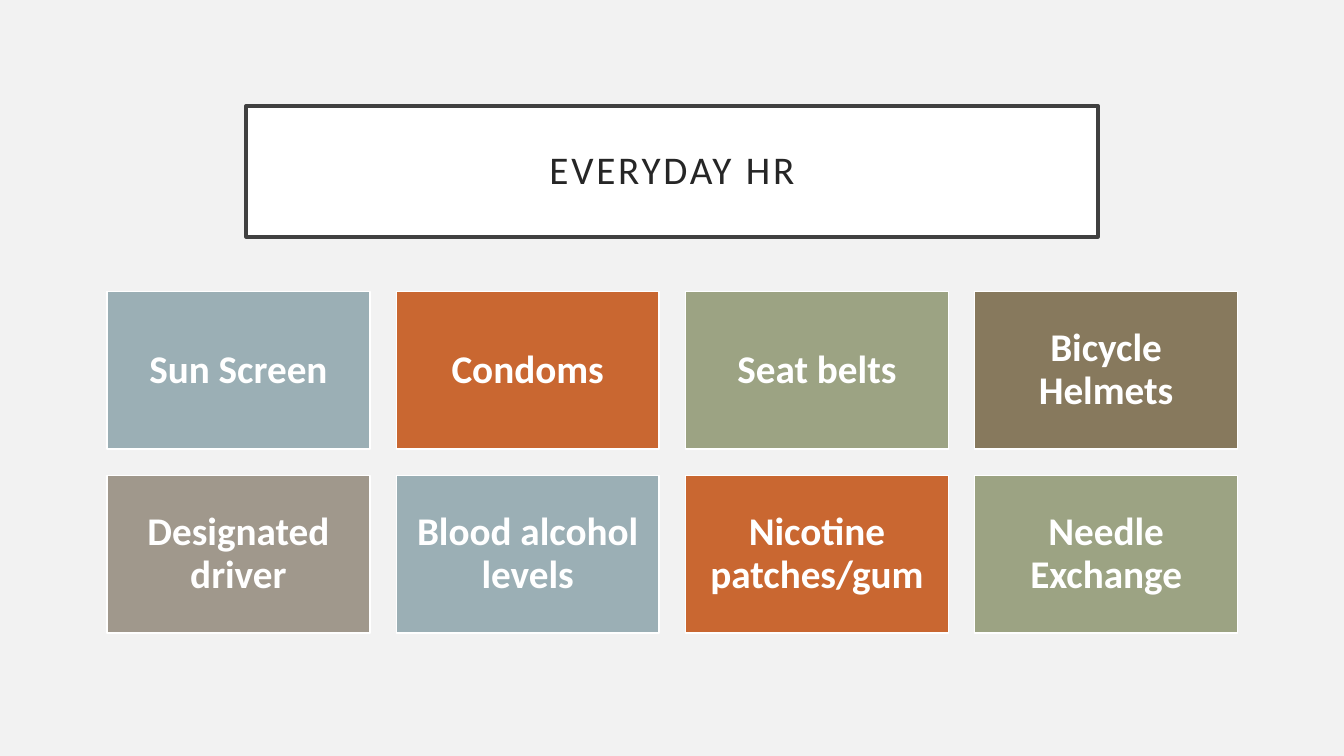
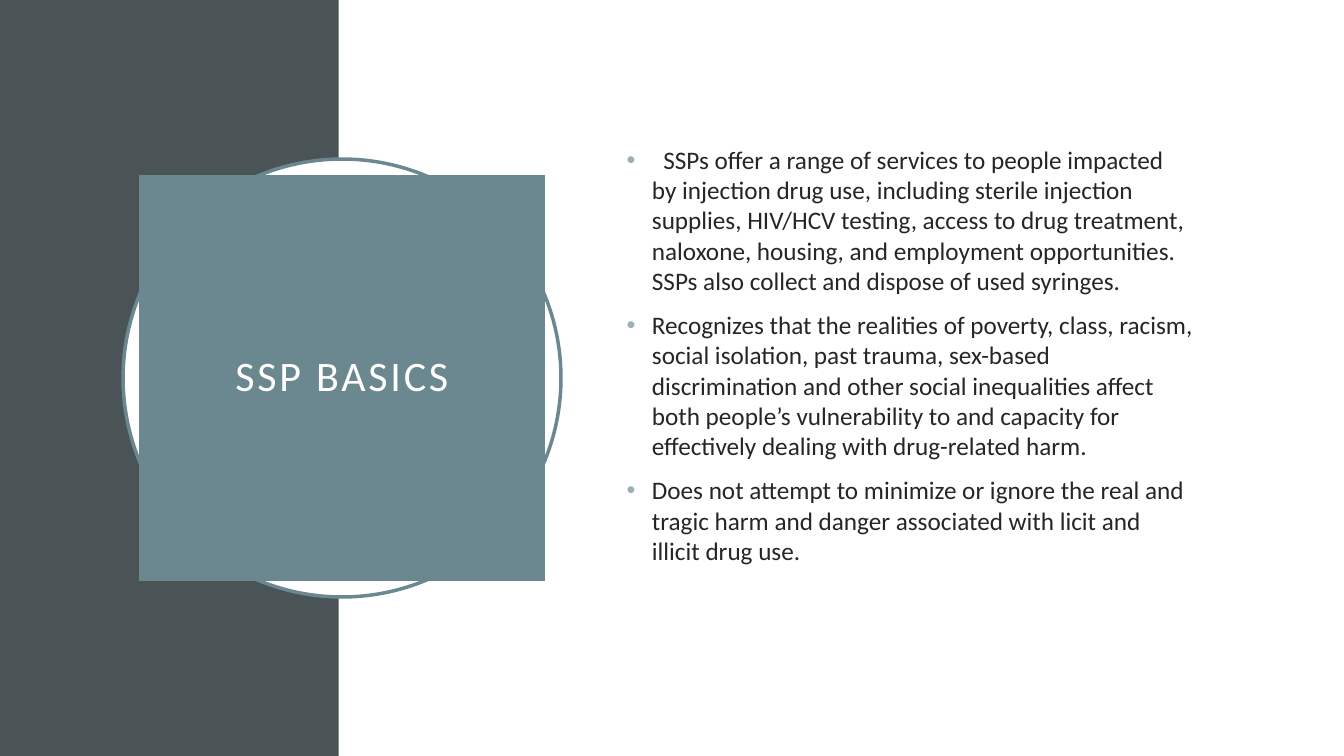
from pptx import Presentation
from pptx.dml.color import RGBColor
from pptx.enum.shapes import MSO_SHAPE as Shape
from pptx.enum.text import MSO_ANCHOR as Anchor, PP_ALIGN as Align
from pptx.oxml.ns import qn
from pptx.util import Pt
from lxml.etree import SubElement

WHITE = RGBColor(0xFF, 0xFF, 0xFF)
PALE = RGBColor(0xF2, 0xF2, 0xF2)
INK = RGBColor(0x26, 0x26, 0x26)
FRAME = RGBColor(0x40, 0x40, 0x40)
SLATE = RGBColor(0x4A, 0x53, 0x56)
TEAL = RGBColor(0x6B, 0x88, 0x91)
MIST = RGBColor(0x9B, 0xAF, 0xB5)
RUST = RGBColor(0xC9, 0x67, 0x31)
SAGE = RGBColor(0x9C, 0xA3, 0x83)
OLIVE = RGBColor(0x87, 0x79, 0x5D)
STONE = RGBColor(0xA0, 0x98, 0x8C)

WIDTH, HEIGHT = 960, 540
BAND_WIDTH = 242

EXAMPLES = [
    ("Sun Screen", MIST), ("Condoms", RUST),
    ("Seat belts", SAGE), ("Bicycle Helmets", OLIVE),
    ("Designated driver", STONE), ("Blood alcohol levels", MIST),
    ("Nicotine patches/gum", RUST), ("Needle Exchange", SAGE),
]
BASICS = [
    "\N{NO-BREAK SPACE}\N{NO-BREAK SPACE}SSPs offer a range of services to people impacted by injection drug use, "
    "including sterile injection supplies, HIV/HCV testing, access to drug treatment, "
    "naloxone, housing, and employment opportunities. SSPs also collect and dispose of "
    "used syringes.",
    "Recognizes that the realities of poverty, class, racism, social isolation, past "
    "trauma, sex-based discrimination and other social inequalities affect both people’s "
    "vulnerability to and capacity for effectively dealing with drug-related harm.",
    "Does not attempt to minimize or ignore the real and tragic harm and danger "
    "associated with licit and illicit drug use.",
]


def add_bullet(paragraph, color, indent):
    props = paragraph._p.get_or_add_pPr()
    props.set("marL", str(Pt(indent)))
    props.set("indent", str(-Pt(indent)))
    bullet_color = SubElement(props, qn("a:buClr"))
    SubElement(bullet_color, qn("a:srgbClr"), val=str(color))
    SubElement(props, qn("a:buFont"), typeface="Arial")
    SubElement(props, qn("a:buChar"), char="•")


def write(frame, *paragraphs, size, color, bold=False, align=Align.CENTER,
          spacing=None, before=0, tracking=0, insets=(7.2, 3.6), bullet=None):
    frame.word_wrap = True
    frame.vertical_anchor = Anchor.MIDDLE
    frame.margin_left = frame.margin_right = Pt(insets[0])
    frame.margin_top = frame.margin_bottom = Pt(insets[1])
    for index, text in enumerate(paragraphs):
        paragraph = frame.add_paragraph() if index else frame.paragraphs[0]
        paragraph.alignment = align
        paragraph.space_before = Pt(before)
        if spacing:
            paragraph.line_spacing = spacing
        if bullet:
            add_bullet(paragraph, bullet, 18)
        run = paragraph.add_run()
        run.text = text
        font = run.font
        font.name, font.size, font.bold = "Calibri", Pt(size), bold
        font.color.rgb = color
        if tracking:
            run._r.get_or_add_rPr().set("spc", str(tracking * 100))


class Deck:
    def __init__(self):
        self.show = Presentation()
        self.show.slide_width, self.show.slide_height = Pt(WIDTH), Pt(HEIGHT)
        self.slide = None

    def new_slide(self, background):
        self.slide = self.show.slides.add_slide(self.show.slide_layouts[6])
        fill = self.slide.background.fill
        fill.solid()
        fill.fore_color.rgb = background

    def block(self, x, y, width, height, fill, line=None, weight=1, kind=Shape.RECTANGLE):
        block = self.slide.shapes.add_shape(kind, Pt(x), Pt(y), Pt(width), Pt(height))
        block.shadow.inherit = False
        block.fill.solid()
        block.fill.fore_color.rgb = fill
        if line is None:
            block.line.fill.background()
        else:
            block.line.color.rgb = line
            block.line.width = Pt(weight)
        return block

    def title(self, text, *place, size, color, fill, line=None):
        panel = self.block(*place, fill, line, 2.5)
        write(panel.text_frame, text, size=size, color=color, spacing=0.9,
              tracking=2, insets=(14.4, 14.4))

    def card(self, text, *place, fill):
        card = self.block(*place, fill, WHITE)
        write(card.text_frame, text, size=28, color=WHITE, bold=True,
              spacing=0.9, insets=(8.4, 8.4))

    def bullets(self, paragraphs, x, y, width, height):
        body = self.slide.shapes.add_textbox(Pt(x), Pt(y), Pt(width), Pt(height))
        write(body.text_frame, *paragraphs, size=18, color=INK,
              align=Align.LEFT, before=10, bullet=MIST)


def everyday_slide(deck):
    deck.new_slide(PALE)
    deck.title("EVERYDAY HR", 175.75, 75.6, 608.5, 93.6,
               size=28, color=INK, fill=WHITE, line=FRAME)
    columns, left, top = 4, 76.4, 208.3
    width, height, gap = 187.8, 112.5, 18.8
    for index, (text, fill) in enumerate(EXAMPLES):
        row, column = divmod(index, columns)
        deck.card(text, left + column * (width + gap), top + row * (height + gap),
                  width, height, fill=fill)


def basics_slide(deck):
    deck.new_slide(WHITE)
    deck.block(0, 0, BAND_WIDTH, HEIGHT, SLATE)
    center_x, center_y = 244.3, HEIGHT / 2
    ring, square = 312.8, 290
    deck.block(center_x - ring / 2, center_y - ring / 2, ring, ring,
               WHITE, TEAL, 2.5, Shape.OVAL)
    deck.title("SSP BASICS", center_x - square / 2, center_y - square / 2,
               square, square, size=30, color=WHITE, fill=TEAL)
    deck.bullets(BASICS, 440.6, 94, 419, 319)


def main():
    deck = Deck()
    everyday_slide(deck)
    basics_slide(deck)
    deck.show.save("out.pptx")


if __name__ == "__main__":
    main()
